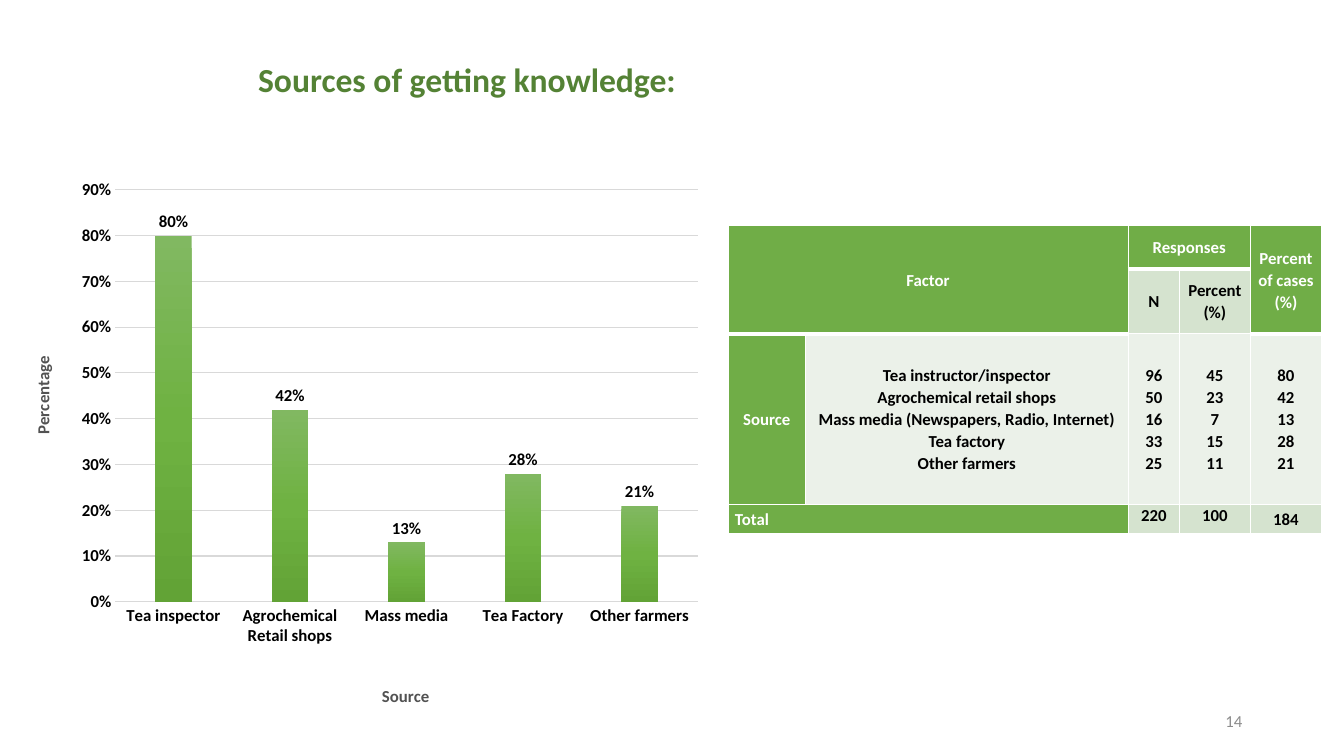
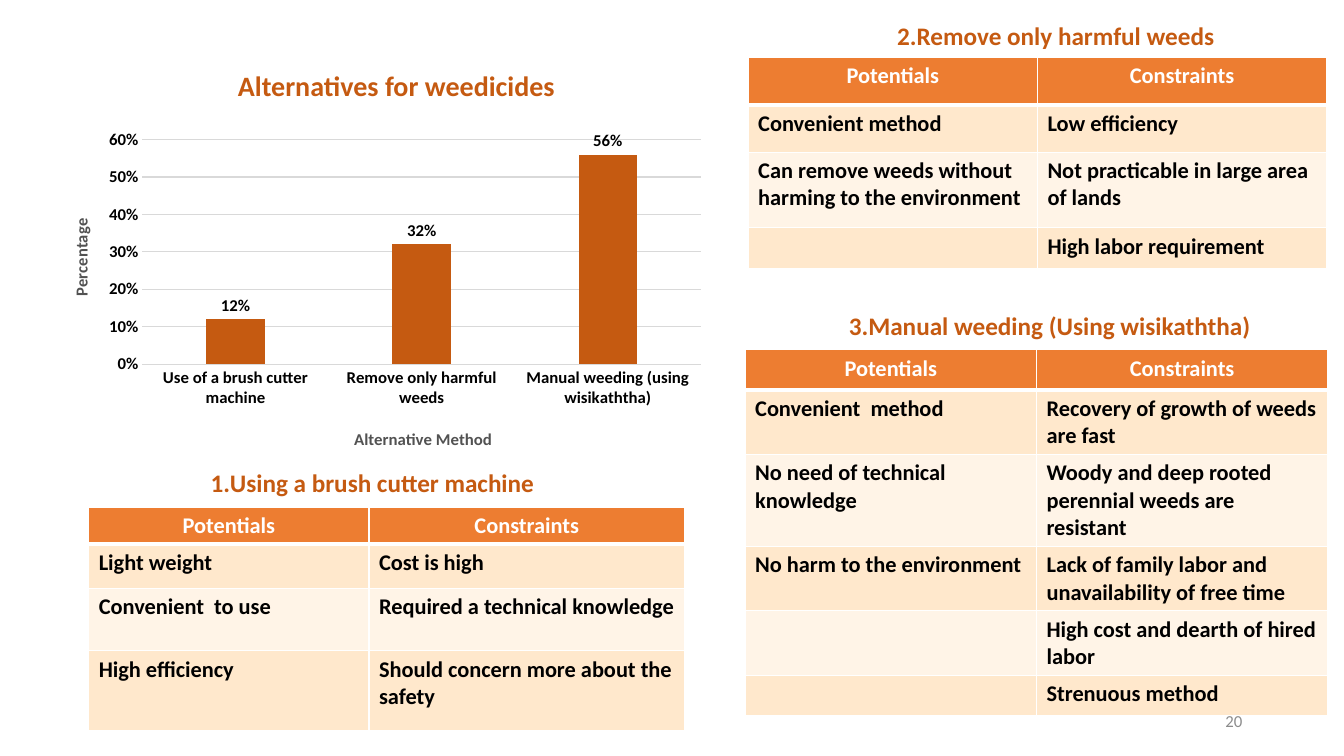
from copy import deepcopy

from lxml import etree
from pptx import Presentation
from pptx import util as u
from pptx.chart.data import CategoryChartData
from pptx.dml.color import RGBColor
from pptx.enum import chart as ch, text
from pptx.oxml.ns import qn

FONT = "Calibri"
WHITE = RGBColor(0xFF, 0xFF, 0xFF)
BLACK = RGBColor(0, 0, 0)
AXIS_GREY = RGBColor(0x52, 0x52, 0x52)
GRID_GREY = RGBColor(0xD9, 0xD9, 0xD9)
NUMBER_GREY = RGBColor(0x8C, 0x8C, 0x8C)
DARK_GREEN = RGBColor(0x54, 0x82, 0x35)
GREEN = RGBColor(0x70, 0xAD, 0x47)
PALE_GREEN = RGBColor(0xD5, 0xE3, 0xCF)
PALEST_GREEN = RGBColor(0xEB, 0xF1, 0xE9)
BAR_GREENS = [(0, RGBColor(0x81, 0xB8, 0x61)),
              (0.5, RGBColor(0x6F, 0xB2, 0x42)),
              (1, RGBColor(0x62, 0xA3, 0x36))]
RUST = RGBColor(0xC5, 0x5A, 0x11)
ORANGE = RGBColor(0xED, 0x7D, 0x31)
BANDS = [RGBColor(0xFF, 0xE8, 0xCC), RGBColor(0xFF, 0xF4, 0xE7)]

LEFT, CENTER, RIGHT = (text.PP_ALIGN.LEFT, text.PP_ALIGN.CENTER,
                       text.PP_ALIGN.RIGHT)
TOP, MIDDLE = text.MSO_ANCHOR.TOP, text.MSO_ANCHOR.MIDDLE

KNOWLEDGE = {
    "title": ("Sources of getting knowledge:", (2.46, 0.58, 9.21, 0.46), 24, DARK_GREEN),
    "number": "14",
    "chart": {
        "at": (0.18, 1.62, 6.88, 5.88),
        "bars": [("Tea inspector", 0.8), ("Agrochemical Retail shops", 0.42),
                 ("Mass media", 0.13), ("Tea Factory", 0.28), ("Other farmers", 0.21)],
        "top": 0.9,
        "plot": (0.14, 0.045, 0.84, 0.695),
        "axes": [("Source", (0.52, 0.875)), ("Percentage", (0.015, 0.32))],
        "colors": BAR_GREENS,
    },
}
ALTERNATIVES = {
    "title": ("Alternatives for weedicides", (2.26, 0.53, 3.51, 0.67), 20, RUST),
    "number": "20",
    "chart": {
        "at": (0.58, 1.23, 6.83, 3.28),
        "bars": [("Use of a brush cutter machine", 0.12),
                 ("Remove only harmful weeds", 0.32),
                 ("Manual weeding (using wisikaththa)", 0.56)],
        "top": 0.6,
        "plot": (0.122, 0.048, 0.811, 0.69),
        "axes": [("Alternative Method", (0.425, 0.925)), ("Percentage", (0.012, 0.285))],
        "colors": [(0, RUST)],
    },
}

SOURCES = [("Tea instructor/inspector", 96, 45, 80),
           ("Agrochemical retail shops", 50, 23, 42),
           ("Mass media (Newspapers, Radio, Internet)", 16, 7, 13),
           ("Tea factory", 33, 15, 28),
           ("Other farmers", 25, 11, 21)]
RESPONSE_COLUMNS = [0.77, 3.2, 0.51, 0.7, 0.71]
RESPONSE_ROWS = [0.43, 0.56, 1.69, 0.29]
RESPONSE_HEADS = [(0, 0, 2, 2, "Factor"), (0, 2, 1, 2, "Responses"),
                  (0, 4, 2, 1, "Percent of cases (%)"),
                  (2, 0, 1, 1, "Source"), (3, 0, 1, 2, "Total")]
RESPONSE_CELLS = [(1, 2, "N"), (1, 3, "Percent\n(%)"),
                  (3, 2, "220"), (3, 3, "100"), (3, 4, "184")]

METHODS = [
    ("1.Using a brush cutter machine", (1.99, 4.59, 3.61, 0.4),
     (0.88, 5.03), [2.78, 3.13], [0.36, 0.44, 0.62, 0.79],
     [("Light weight", "Cost is high"),
      ("Convenient  to use", "Required a technical knowledge"),
      ("High efficiency", "Should concern more about the safety")]),
    ("2.Remove only harmful weeds", (8.8, 0.15, 3.72, 0.4),
     (7.42, 0.57), [2.87, 2.87], [0.47, 0.47, 0.75, 0.39],
     [("Convenient method", "Low efficiency"),
      ("Can remove weeds without harming to the environment",
       "Not practicable in large area of lands"),
      ("", "High labor requirement")]),
    ("3.Manual weeding (Using wisikaththa)", (8.32, 3.03, 4.68, 0.4),
     (7.39, 3.47), [2.89, 2.89], [0.4, 0.64, 0.91, 0.64, 0.64, 0.4],
     [("Convenient  method", "Recovery of growth of weeds are fast"),
      ("No need of technical knowledge",
       "Woody and deep rooted perennial weeds are resistant"),
      ("No harm to the environment",
       "Lack of family labor and unavailability of free time"),
      ("", "High cost and dearth of hired labor"),
      ("", "Strenuous method")]),
]


def inches(values):
    return [u.Inches(value) for value in values]


def style(font, size, color, bold=True):
    font.name, font.size, font.bold = FONT, u.Pt(size), bold
    font.color.rgb = color


def write(frame, words, size, color, bold=True, align=LEFT, spacing=None):
    frame.word_wrap = True
    for i, line in enumerate(words.split("\n")):
        paragraph = frame.add_paragraph() if i else frame.paragraphs[0]
        paragraph.alignment = align
        if spacing:
            paragraph.line_spacing = spacing
        run = paragraph.add_run()
        run.text = line
        style(run.font, size, color, bold)


def add_label(slide, words, at, size, color, **options):
    frame = slide.shapes.add_textbox(*inches(at)).text_frame
    write(frame, words, size, color, **options)
    return frame


def set_layout(parent, index, values, inner=False):
    for old in parent.findall(qn("c:layout")):
        parent.remove(old)
    layout = etree.Element(qn("c:layout"))
    manual = etree.SubElement(layout, qn("c:manualLayout"))
    settings = [("layoutTarget", "inner")] if inner else []
    settings += [("xMode", "edge"), ("yMode", "edge")]
    settings += zip("xywh", values)
    for tag, value in settings:
        etree.SubElement(manual, qn("c:" + tag)).set("val", str(value))
    parent.insert(index, layout)


def color_bars(series, colors):
    fill = series.format.fill
    if len(colors) == 1:
        fill.solid()
        fill.fore_color.rgb = colors[0][1]
        return
    fill.gradient()
    fill.gradient_angle = 270
    stops = series._element.find(".//" + qn("a:gsLst"))
    while len(stops) < len(colors):
        stops.append(deepcopy(stops[-1]))
    for stop, (position, color) in zip(fill.gradient_stops, colors):
        stop.position = position
        stop.color.rgb = color


def add_bars(slide, content):
    data = CategoryChartData(number_format="0%")
    data.categories = [name for name, _ in content["bars"]]
    data.add_series("Series 1", [share for _, share in content["bars"]])
    chart = slide.shapes.add_chart(ch.XL_CHART_TYPE.COLUMN_CLUSTERED,
                                   *inches(content["at"]), data).chart
    chart.has_legend = chart.has_title = False
    style(chart.font, 12, BLACK)
    plot = chart.plots[0]
    plot.gap_width, plot.overlap, plot.vary_by_categories = 219, -27, False
    color_bars(plot.series[0], content["colors"])
    plot.has_data_labels = True
    labels = plot.data_labels
    labels.show_value = True
    labels.position = ch.XL_LABEL_POSITION.OUTSIDE_END
    labels.number_format, labels.number_format_is_linked = "0%", False
    style(labels.font, 12, BLACK)

    shares = chart.value_axis
    shares.minimum_scale, shares.maximum_scale, shares.major_unit = 0, content["top"], 0.1
    shares.tick_labels.number_format = "0%"
    shares.tick_labels.number_format_is_linked = False
    shares.has_major_gridlines = True
    for line in (shares.major_gridlines.format.line, chart.category_axis.format.line):
        line.color.rgb = GRID_GREY
        line.width = u.Pt(0.75)
    shares.format.line.fill.background()
    for axis, (words, corner) in zip((chart.category_axis, shares), content["axes"]):
        axis.major_tick_mark = axis.minor_tick_mark = ch.XL_TICK_MARK.NONE
        style(axis.tick_labels.font, 12, BLACK)
        write(axis.axis_title.text_frame, words, 12, AXIS_GREY, align=CENTER)
        set_layout(axis.axis_title._element, 1, corner)
    set_layout(chart._chartSpace.chart.plotArea, 0, content["plot"], inner=True)


def add_grid(slide, corner, columns, rows):
    size = (sum(columns), sum(rows))
    table = slide.shapes.add_table(len(rows), len(columns),
                                   *inches((*corner, *size))).table
    table.first_row = table.horz_banding = False
    for column, width in zip(table.columns, columns):
        column.width = u.Inches(width)
    for row, height in zip(table.rows, rows):
        row.height = u.Inches(height)
    return table


def paint(cell, color, top=1, bottom=1):
    properties = cell._tc.get_or_add_tcPr()
    for side, width in (("L", 1), ("R", 1), ("T", top), ("B", bottom)):
        line = etree.SubElement(properties, qn("a:ln" + side), w=str(u.Pt(width)))
        fill = etree.SubElement(line, qn("a:solidFill"))
        etree.SubElement(fill, qn("a:srgbClr"), val=str(WHITE))
    cell.fill.solid()
    cell.fill.fore_color.rgb = color


def add_responses(slide):
    table = add_grid(slide, (7.22, 2.24), RESPONSE_COLUMNS, RESPONSE_ROWS)

    def put(row, column, words, fill, color, bottom=1, align=CENTER, anchor=MIDDLE):
        cell = table.cell(row, column)
        paint(cell, fill, bottom=bottom)
        cell.margin_left = cell.margin_right = u.Inches(0.07)
        cell.margin_top = cell.margin_bottom = 0
        cell.vertical_anchor = anchor
        write(cell.text_frame, words, 12, color, align=align, spacing=1.07)

    for row, column, tall, wide, words in RESPONSE_HEADS:
        if tall * wide > 1:
            table.cell(row, column).merge(table.cell(row + tall - 1, column + wide - 1))
        put(row, column, words, GREEN, WHITE, bottom=1 if row else 3,
            align=LEFT if words == "Total" else CENTER)
    for row, column, words in RESPONSE_CELLS:
        put(row, column, words, PALE_GREEN, BLACK,
            anchor=TOP if row == 3 and column < 4 else MIDDLE)
    for column, values in enumerate(zip(*SOURCES), 1):
        put(2, column, "\n".join(map(str, values)), PALEST_GREEN, BLACK)


def add_method(slide, caption, caption_at, corner, columns, rows, points):
    table = add_grid(slide, corner, columns, rows)
    for i, pair in enumerate([("Potentials", "Constraints"), *points]):
        for j, words in enumerate(pair):
            cell = table.cell(i, j)
            paint(cell, BANDS[(i - 1) % 2] if i else ORANGE,
                  top=3 if i == 1 else 1, bottom=1 if i else 3)
            write(cell.text_frame, words, 16, BLACK if i else WHITE,
                  align=LEFT if i else CENTER)
    add_label(slide, caption, caption_at, 18, RUST)


def add_page(deck, content):
    slide = deck.slides.add_slide(deck.slide_layouts[5])
    words, at, size, color = content["title"]
    title = slide.shapes.title
    title.left, title.top, title.width, title.height = inches(at)
    title.text_frame.vertical_anchor = MIDDLE
    write(title.text_frame, words, size, color, spacing=0.9)
    number = add_label(slide, content["number"], (9.42, 6.95, 3, 0.4), 12,
                       NUMBER_GREY, bold=False, align=RIGHT)
    number.vertical_anchor = MIDDLE
    add_bars(slide, content["chart"])
    return slide


def main():
    deck = Presentation()
    deck.slide_width, deck.slide_height = inches((13.33, 7.5))
    add_responses(add_page(deck, KNOWLEDGE))
    alternatives = add_page(deck, ALTERNATIVES)
    for method in METHODS:
        add_method(alternatives, *method)
    deck.save("out.pptx")


if __name__ == "__main__":
    main()
